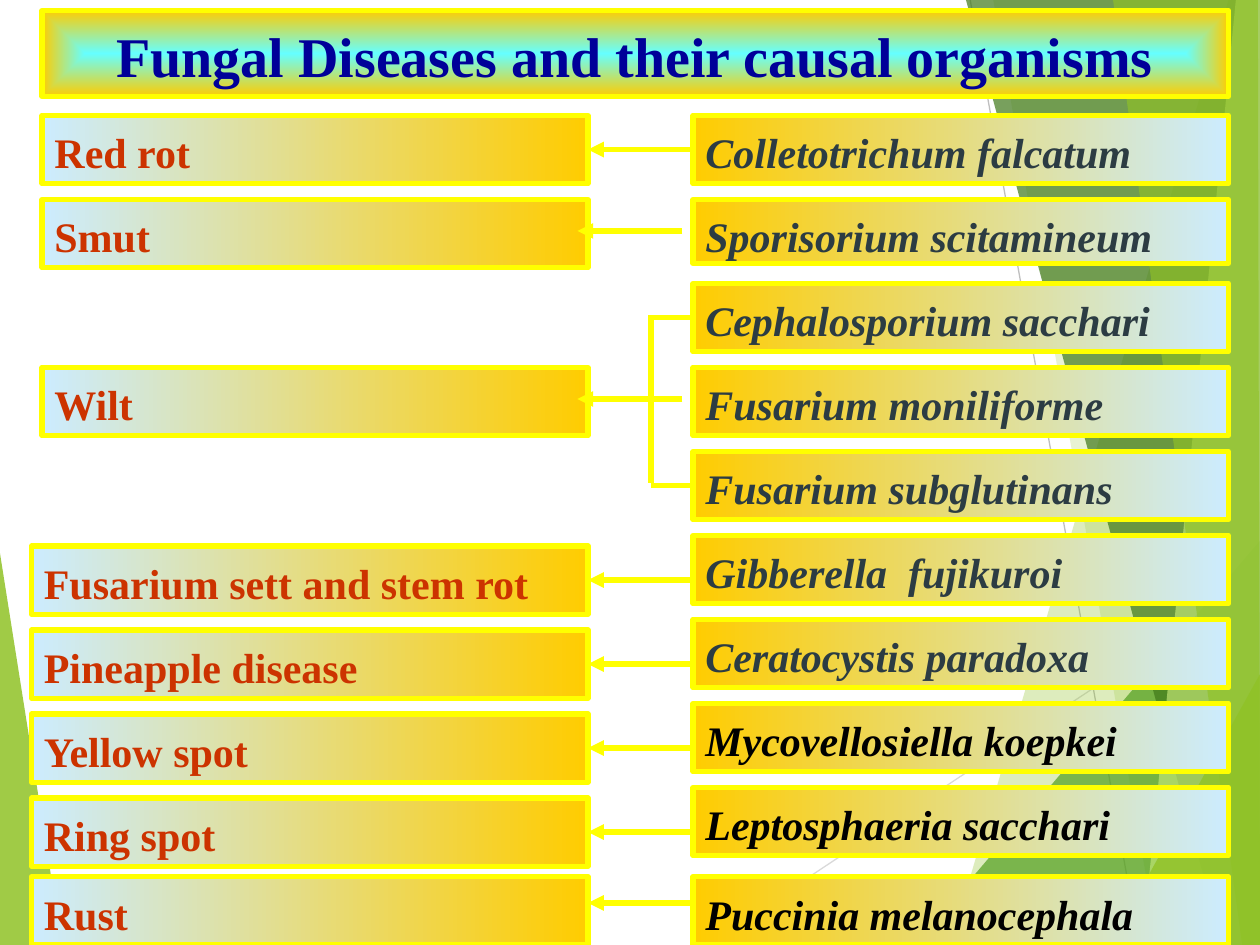
"""Build a slide that pairs fungal diseases with their causal organisms."""
from lxml import etree
from pptx import Presentation, util as u
from pptx.dml import color
from pptx.enum import shapes, text as t
from pptx.oxml import ns


def rgb(code):
    return color.RGBColor.from_string(code)


def write(box, text, size=24, ink="000000", italic=False, align=t.PP_ALIGN.LEFT):
    frame = box.text_frame
    frame.word_wrap = True
    frame.vertical_anchor = t.MSO_ANCHOR.TOP
    frame.margin_top, frame.margin_bottom = u.Inches(0.09), 0
    para = frame.paragraphs[0]
    para.alignment = align
    span = para.add_run()
    span.text = text
    span.font.name, span.font.size = "Times New Roman", u.Pt(size)
    span.font.bold, span.font.italic = True, italic
    span.font.color.rgb = rgb(ink)


deck = Presentation()
deck.slide_width, deck.slide_height = u.Inches(10), u.Inches(7.5)
page = deck.slides.add_slide(deck.slide_layouts[6])
CELL = deck.slide_width / 120
YELLOW, GOLD, PALE = "FFFF00", "FFCC00", "CCECFF"
ROW_HEIGHT = 6.5

hairlines = [((67.3, 90), (120, 55), "D9D9D9"), ((92.4, 0), (108.5, 90), "BFBFBF")]
for start, end, ink in hairlines:
    ends = [round(value * CELL) for value in start + end]
    line = page.shapes.add_connector(shapes.MSO_CONNECTOR.STRAIGHT, *ends)
    line.line.color.rgb = rgb(ink)
    line.line.width = u.Pt(0.75)

facets = [
    ("90C226", 85, [(0, 52.7), (5.9, 90), (0, 90)]),
    ("90C226", 30, [(117, 0), (90.5, 90), (120, 90), (120, 0)]),
    ("90C226", 20, [(94.6, 0), (110.3, 90), (120, 90), (120, 0)]),
    ("54A021", 72, [(87.1, 90), (120, 51.5), (120, 90)]),
    ("3F7819", 70, [(92, 0), (116.4, 90), (120, 90), (120, 0)]),
    ("C0E474", 70, [(117.7, 0), (108.8, 90), (120, 90), (120, 0)]),
    ("90C226", 65, [(106, 0), (118.3, 90), (120, 90), (119.8, 0)]),
    ("90C226", 80, [(105.7, 90), (120, 64.2), (120, 90)]),
]
for fill, opacity, corners in facets:
    points = [(round(x * CELL), round(y * CELL)) for x, y in corners]
    builder = page.shapes.build_freeform(*points[0])
    builder.add_line_segments(points[1:], close=True)
    facet = builder.convert_to_shape()
    facet.shadow.inherit = False
    facet.fill.solid()
    facet.fill.fore_color.rgb = rgb(fill)
    facet.line.fill.background()
    tint = facet.element.spPr.find(".//" + ns.qn("a:srgbClr"))
    etree.SubElement(tint, ns.qn("a:alpha"), val=str(opacity * 1000))

diseases = [
    ("Red rot", 4, 11), ("Smut", 4, 19), ("Wilt", 4, 35),
    ("Fusarium sett and stem rot", 3, 52), ("Pineapple disease", 3, 60),
    ("Yellow spot", 3, 68), ("Ring spot", 3, 76), ("Rust", 3, 83.5),
]
organisms = [
    "Colletotrichum falcatum", "Sporisorium scitamineum", "Cephalosporium sacchari",
    "Fusarium moniliforme", "Fusarium subglutinans", "Gibberella  fujikuroi",
    "Ceratocystis paradoxa", "Mycovellosiella koepkei", "Leptosphaeria sacchari",
    "Puccinia melanocephala",
]
title = "Fungal Diseases and their causal organisms"
cards = [(title, 4, 1, 113, 8.2, ("66FFFF", GOLD),
          dict(size=32, ink="000099", align=t.PP_ALIGN.CENTER))]
for name, left, top in diseases:
    cards.append((name, left, top, 56 - left, ROW_HEIGHT, (PALE, GOLD), dict(ink="CC3300")))
for row, name in enumerate(organisms):
    top = 83.5 if row == 9 else 11 + 8 * row
    height = 6.1 if row == 1 else ROW_HEIGHT
    ink = "2C3C43" if row < 7 else "000000"
    cards.append((name, 66, top, 51, height, (GOLD, PALE), dict(ink=ink, italic=True)))

boxes = {}
for name, left, top, width, height, blend, style in cards:
    area = [round(value * CELL) for value in (left, top, width, height)]
    box = page.shapes.add_shape(shapes.MSO_SHAPE.RECTANGLE, *area)
    box.shadow.inherit = False
    box.fill.gradient()
    box.fill.gradient_angle = 0
    for stop, ink in zip(box.fill.gradient_stops, blend):
        stop.color.rgb = rgb(ink)
    box.line.color.rgb = rgb(YELLOW)
    box.line.width = u.Pt(3)
    write(box, name, **style)
    boxes[name] = box

blend = boxes[title].element.spPr.find(ns.qn("a:gradFill"))
blend.remove(blend.find(ns.qn("a:lin")))
glow = etree.SubElement(blend, ns.qn("a:path"), path="shape")
etree.SubElement(glow, ns.qn("a:fillToRect"), l="50000", t="50000", r="50000", b="50000")

links = [
    ((62, 30), (62, 46), None, None, False),
    ((62, 30.25), (66, 30.25), None, ("Cephalosporium sacchari", 1), False),
    ((62, 46.25), (66, 46.25), None, ("Fusarium subglutinans", 1), False),
    ((66, 14.25), (56, 14.25), ("Colletotrichum falcatum", 1), ("Red rot", 3), True),
    ((65, 22), (55, 22), None, None, True),
    ((65, 38), (55, 38), None, None, True),
    ((66, 86), (56, 86), None, None, True),
]
for name, left, top in diseases[3:7]:
    middle = top + ROW_HEIGHT / 2
    links.append(((66, middle), (56, middle), None, (name, 3), True))
for start, end, source, target, arrow in links:
    ends = [round(value * CELL) for value in start + end]
    link = page.shapes.add_connector(shapes.MSO_CONNECTOR.STRAIGHT, *ends)
    link.line.color.rgb = rgb(YELLOW)
    link.line.width = u.Pt(3)
    if source:
        link.begin_connect(boxes[source[0]], source[1])
    if target:
        link.end_connect(boxes[target[0]], target[1])
    if arrow:
        stroke = link.element.spPr.find(ns.qn("a:ln"))
        etree.SubElement(stroke, ns.qn("a:tailEnd"), type="triangle")

for shape in page.shapes:
    if shape.shape_type == shapes.MSO_SHAPE_TYPE.LINE:
        etree.SubElement(shape.element.spPr, ns.qn("a:effectLst"))

deck.save("out.pptx")
